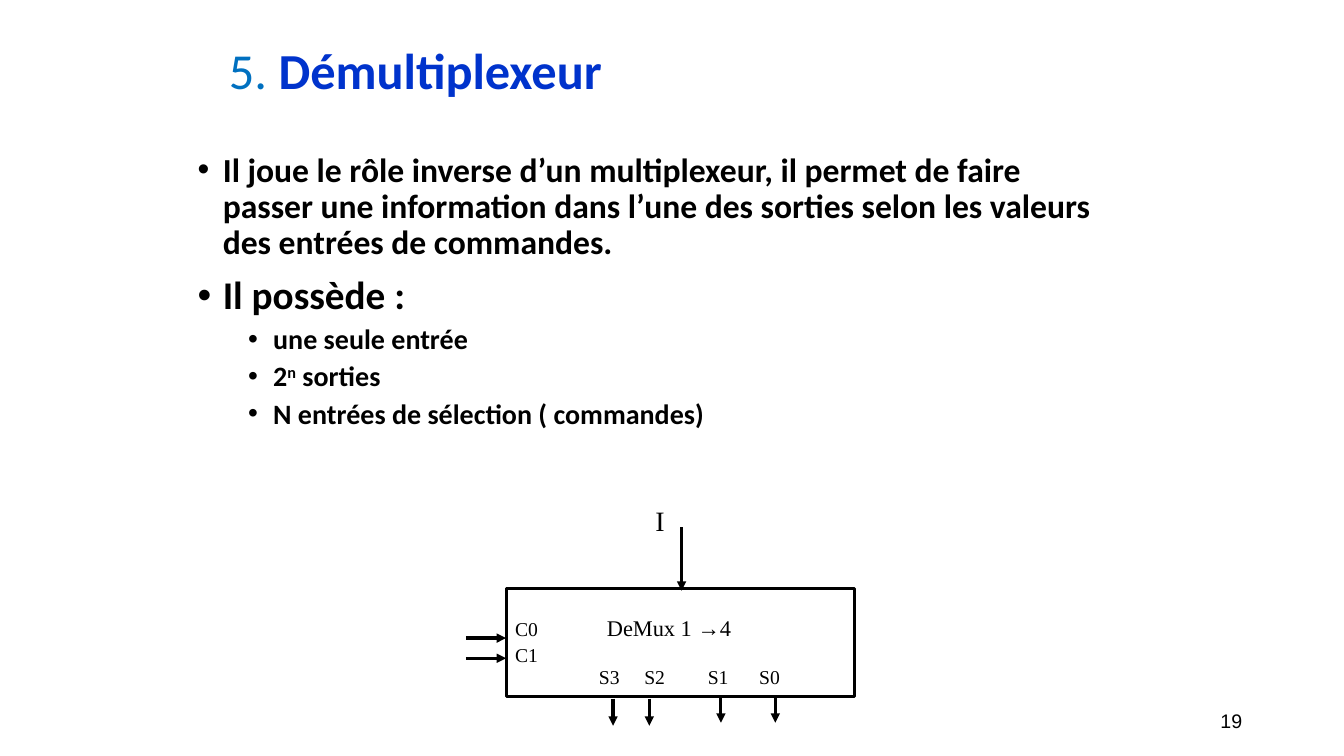
from dataclasses import dataclass

from lxml import etree
from pptx import Presentation
from pptx.dml.color import RGBColor
from pptx.enum.shapes import MSO_CONNECTOR, MSO_SHAPE
from pptx.enum.text import MSO_ANCHOR, MSO_AUTO_SIZE, PP_ALIGN
from pptx.oxml.ns import qn
from pptx.util import Pt

PX = 9144
STRAIGHT = MSO_CONNECTOR.STRAIGHT
RECTANGLE = MSO_SHAPE.RECTANGLE
TOP, MIDDLE = MSO_ANCHOR.TOP, MSO_ANCHOR.MIDDLE
LEFT, RIGHT = PP_ALIGN.LEFT, PP_ALIGN.RIGHT
NO_FIT = MSO_AUTO_SIZE.NONE
TITLE_AND_CONTENT = 1


@dataclass(frozen=True)
class Theme:
    ink: str = "000000"
    paper: str = "FFFFFF"
    number: str = "0070C0"
    heading: str = "0033CC"
    text_font: str = "Calibri"
    diagram_font: str = "Times New Roman"
    page_font: str = "Arial"
    title: int = 36
    lead: int = 24
    topic: int = 28
    detail: int = 20
    block: int = 16
    pin: int = 14
    line: float = 2.25


THEME = Theme()

POINTS = [
    (0, THEME.lead, ["Il joue le rôle inverse d’un multiplexeur, il permet de faire passer "
                     "une information dans l’une des sorties selon les valeurs des entrées "
                     "de commandes."]),
    (0, THEME.topic, ["Il possède :"]),
    (1, THEME.detail, ["une seule entrée"]),
    (1, THEME.detail, ["2", "n", " sorties"]),
    (1, THEME.detail, ["N entrées de sélection ( commandes)"]),
]


def rgb(value):
    return RGBColor.from_string(value)


def emu(*lengths):
    return [length * PX for length in lengths]


def add_text(paragraph, text, size, font=THEME.text_font, color=THEME.ink,
             bold=False, superscript=False):
    run = paragraph.add_run()
    run.text = text
    run.font.name = font
    run.font.size = Pt(size)
    run.font.bold = bold
    run.font.color.rgb = rgb(color)
    if superscript:
        run._r.get_or_add_rPr().set("baseline", "30000")


def place(placeholder, box, anchor):
    placeholder.left, placeholder.top, placeholder.width, placeholder.height = emu(*box)
    frame = placeholder.text_frame
    frame.word_wrap = True
    frame.auto_size = NO_FIT
    frame.vertical_anchor = anchor
    return frame


def add_label(slide, box, text, size, font=THEME.diagram_font, align=LEFT, margin=0):
    frame = slide.shapes.add_textbox(*emu(*box)).text_frame
    frame.word_wrap = True
    frame.vertical_anchor = MIDDLE
    frame.margin_left = frame.margin_right = margin * PX
    frame.margin_top = frame.margin_bottom = 0
    paragraph = frame.paragraphs[0]
    paragraph.alignment = align
    add_text(paragraph, text, size, font)


def add_arrow(slide, x, y, across=0, down=0):
    arrow = slide.shapes.add_connector(STRAIGHT, *emu(x, y, x + across, y + down))
    arrow.line.color.rgb = rgb(THEME.ink)
    arrow.line.width = Pt(THEME.line)
    etree.SubElement(arrow.line._get_or_add_ln(), qn("a:tailEnd"), type="triangle")
    etree.SubElement(arrow._element.spPr, qn("a:effectLst"))


def set_bullet(paragraph, level):
    properties = paragraph._p.get_or_add_pPr()
    properties.set("marL", str((25 + 50 * level) * PX))
    properties.set("indent", str(-25 * PX))
    etree.SubElement(properties, qn("a:buFont"), typeface="Arial")
    etree.SubElement(properties, qn("a:buChar"), char="•")


def build_title(slide, box):
    paragraph = place(slide.shapes.title, box, MIDDLE).paragraphs[0]
    paragraph.alignment = LEFT
    paragraph.line_spacing = 0.9
    add_text(paragraph, "5. ", THEME.title, color=THEME.number)
    add_text(paragraph, "Démultiplexeur", THEME.title, color=THEME.heading, bold=True)


def build_points(slide, box):
    frame = place(slide.placeholders[1], box, TOP)
    for index, (level, size, parts) in enumerate(POINTS):
        paragraph = frame.add_paragraph() if index else frame.paragraphs[0]
        paragraph.level = level
        paragraph.line_spacing = 0.9
        paragraph.space_before = Pt(5 if level else 10)
        set_bullet(paragraph, level)
        for part in parts:
            add_text(paragraph, part, size, bold=True, superscript=part == "n")


def build_demultiplexer(slide, box):
    left, top, width, height = box
    block_left, block_top, block_height = left + 40, top + 91, 107
    block = slide.shapes.add_shape(
        RECTANGLE, *emu(block_left, block_top, width - 40, block_height))
    block.shadow.inherit = False
    block.fill.solid()
    block.fill.fore_color.rgb = rgb(THEME.paper)
    block.line.color.rgb = rgb(THEME.ink)
    block.line.width = Pt(THEME.line)

    add_label(slide, (left + 188, top + 8, 40, 30), "I", THEME.detail)
    add_arrow(slide, left + 214, top + 30, down=63)
    add_label(slide, (block_left + 100, block_top + 26, 160, 26), "DeMux 1 →4", THEME.block)

    for index, name in enumerate(["C0", "C1"]):
        add_label(slide, (block_left + 9, block_top + 29 + 25 * index, 40, 22),
                  name, THEME.pin)
        add_arrow(slide, left, block_top + 49 + 20 * index, across=40)

    outputs = [("S3", 92, 106, 109), ("S2", 137, 142, 109),
               ("S1", 200, 213, 106), ("S0", 251, 267, 106)]
    for name, label_x, arrow_x, arrow_y in outputs:
        add_label(slide, (block_left + label_x, block_top + 76, 40, 22), name, THEME.pin)
        add_arrow(slide, block_left + arrow_x, block_top + arrow_y, down=27)


def build_page_number(slide, box):
    add_label(slide, box, "19", THEME.pin, THEME.page_font, RIGHT, margin=10)


def main():
    presentation = Presentation()
    presentation.slide_width, presentation.slide_height = emu(1333, 750)
    slide = presentation.slides.add_slide(presentation.slide_layouts[TITLE_AND_CONTENT])
    build_title(slide, (217, 30, 900, 85))
    build_points(slide, (186, 147, 906, 315))
    build_demultiplexer(slide, (462, 493, 386, 227))
    build_page_number(slide, (942, 695, 300, 40))
    presentation.save("out.pptx")


if __name__ == "__main__":
    main()
